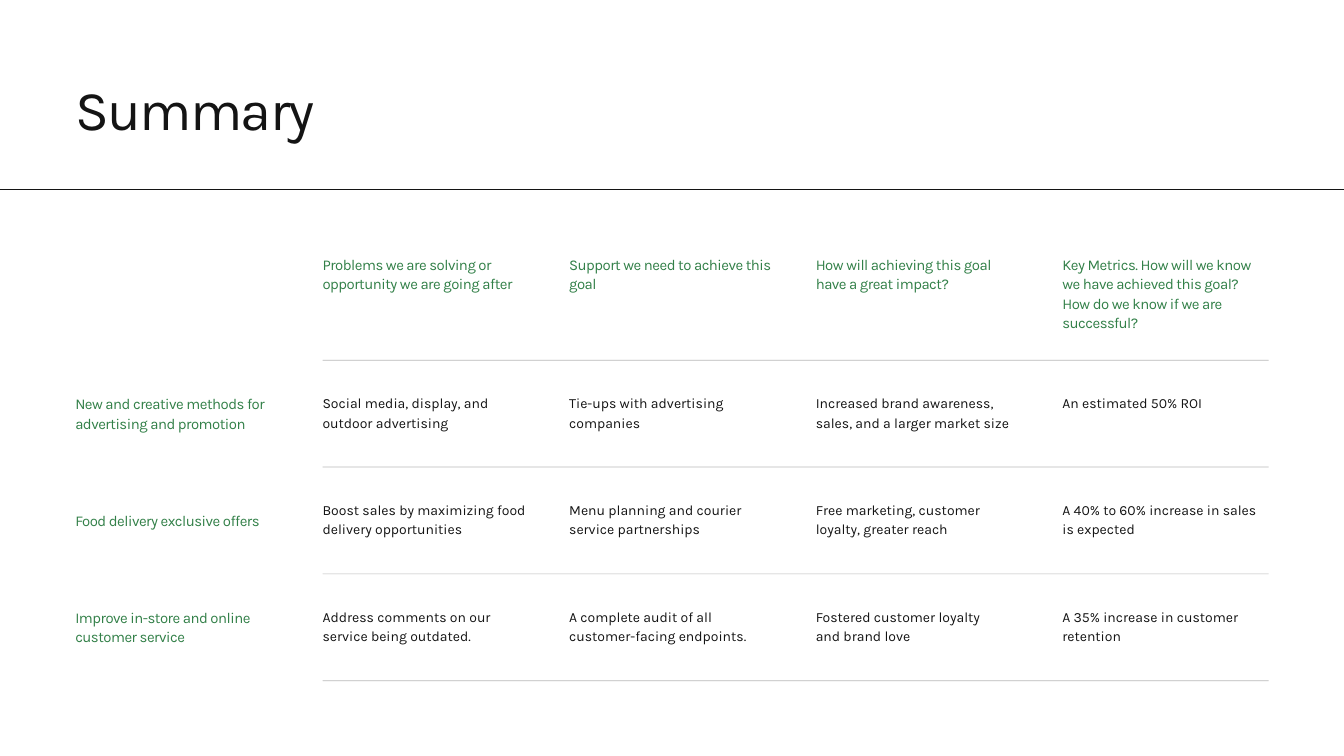
import dataclasses

import lxml.etree
import pptx
import pptx.dml.color
import pptx.enum.shapes
import pptx.enum.text
import pptx.oxml.ns
import pptx.util

PX = 9144
FONT = "Karla"
COLORS = {"ink": "141414", "green": "328048"}
NO_STYLE = "{2D5ABB26-0587-4C30-8999-92F81FD0307C}"

TABLE_LEFT, TABLE_TOP = 112, 379
COLUMN_WIDTHS = [368, 367, 367, 367, 307]
ROW_HEIGHTS = [157, 159, 159, 159]
GUTTER = 61
BODY_INSET = 48


@dataclasses.dataclass(frozen=True)
class TextStyle:
    size: float
    color: str
    leading: float
    tracking: int = 0


TITLE = TextStyle(60, "ink", 72, -180)
HEADING = TextStyle(16, "green", 20.8, -50)
BODY = TextStyle(15, "ink", 21)

ROWS = [
    ["",
     "Problems we are solving or opportunity we are going after",
     "Support we need to achieve this goal",
     "How will achieving this goal have a great impact?",
     "Key Metrics. How will we know we have achieved this goal? "
     "How do we know if we are successful?"],
    ["New and creative methods for advertising and promotion",
     "Social media, display, and outdoor advertising",
     "Tie-ups with advertising companies",
     "Increased brand awareness, sales, and a larger market size",
     "An estimated 50% ROI"],
    ["Food delivery exclusive offers",
     "Boost sales by maximizing food delivery opportunities",
     "Menu planning and courier service partnerships",
     "Free marketing, customer loyalty, greater reach",
     "A 40% to 60% increase in sales\nis expected"],
    ["Improve in-store and online customer service",
     "Address comments on our service being outdated.",
     "A complete audit of all customer-facing endpoints.",
     "Fostered customer loyalty\nand brand love",
     "A 35% increase in customer retention"],
]


def px(n: int) -> int:
    return pptx.util.Emu(n * PX)


def rgb(name: str) -> pptx.dml.color.RGBColor:
    return pptx.dml.color.RGBColor.from_string(COLORS[name])


def set_text(tf, text: str, style: TextStyle) -> None:
    tf.text = text
    tf.word_wrap = True
    for p in tf.paragraphs:
        p.alignment = pptx.enum.text.PP_ALIGN.LEFT
        p.line_spacing = pptx.util.Pt(style.leading)
        for r in p.runs:
            r.font.name = FONT
            r.font.size = pptx.util.Pt(style.size)
            r.font.color.rgb = rgb(style.color)
            if style.tracking:
                r.font._element.set("spc", str(style.tracking))


def add_title(s, text: str) -> None:
    sp = s.shapes.title
    sp.left, sp.top, sp.width, sp.height = px(112), px(111), px(1017), px(102)
    tf = sp.text_frame
    tf.margin_left = tf.margin_top = tf.margin_right = tf.margin_bottom = 0
    tf.vertical_anchor = pptx.enum.text.MSO_ANCHOR.TOP
    tf.auto_size = pptx.enum.text.MSO_AUTO_SIZE.NONE
    set_text(tf, text, TITLE)


def add_rule(s, left: int, y: int, width: int, opacity: int = 100) -> None:
    line = s.shapes.add_connector(
        pptx.enum.shapes.MSO_CONNECTOR.STRAIGHT,
        px(left), px(y), px(left + width), px(y))
    line.line.color.rgb = rgb("ink")
    line.line.width = pptx.util.Pt(0.75)
    sp_pr = line._element.spPr
    if opacity < 100:
        color = sp_pr.find(".//" + pptx.oxml.ns.qn("a:srgbClr"))
        alpha = lxml.etree.SubElement(color, pptx.oxml.ns.qn("a:alpha"))
        alpha.set("val", str(opacity * 1000))
    lxml.etree.SubElement(sp_pr, pptx.oxml.ns.qn("a:effectLst"))


def fill_cell(cell, text: str, row: int, col: int, last_col: int) -> None:
    is_label = col == 0
    is_body = row > 0 and not is_label
    cell.margin_left = cell.margin_bottom = 0
    cell.margin_top = px(BODY_INSET if is_body else 0)
    cell.margin_right = px(0 if col == last_col else GUTTER)
    cell.vertical_anchor = (pptx.enum.text.MSO_ANCHOR.MIDDLE if is_label
                            else pptx.enum.text.MSO_ANCHOR.TOP)
    cell.fill.background()
    set_text(cell.text_frame, text, BODY if is_body else HEADING)


def add_summary_table(s, rows: list[list[str]]) -> None:
    table = s.shapes.add_table(
        len(rows), len(rows[0]), px(TABLE_LEFT), px(TABLE_TOP),
        px(sum(COLUMN_WIDTHS)), px(sum(ROW_HEIGHTS))).table
    table.horz_banding = False
    table._tbl.tblPr.find(pptx.oxml.ns.qn("a:tableStyleId")).text = NO_STYLE
    for column, width in zip(table.columns, COLUMN_WIDTHS):
        column.width = px(width)
    y = TABLE_TOP
    for i, (texts, height) in enumerate(zip(rows, ROW_HEIGHTS)):
        table.rows[i].height = px(height)
        for j, text in enumerate(texts):
            fill_cell(table.cell(i, j), text, i, j, len(texts) - 1)
        y += height
        add_rule(s, TABLE_LEFT + COLUMN_WIDTHS[0], y,
                 sum(COLUMN_WIDTHS[1:]), opacity=30)


def main() -> None:
    prs = pptx.Presentation()
    prs.slide_width, prs.slide_height = px(2000), px(1125)
    s = prs.slides.add_slide(prs.slide_layouts[5])
    add_rule(s, 0, 282, 2000)
    add_title(s, "Summary")
    add_summary_table(s, ROWS)
    prs.save("out.pptx")


if __name__ == "__main__":
    main()
